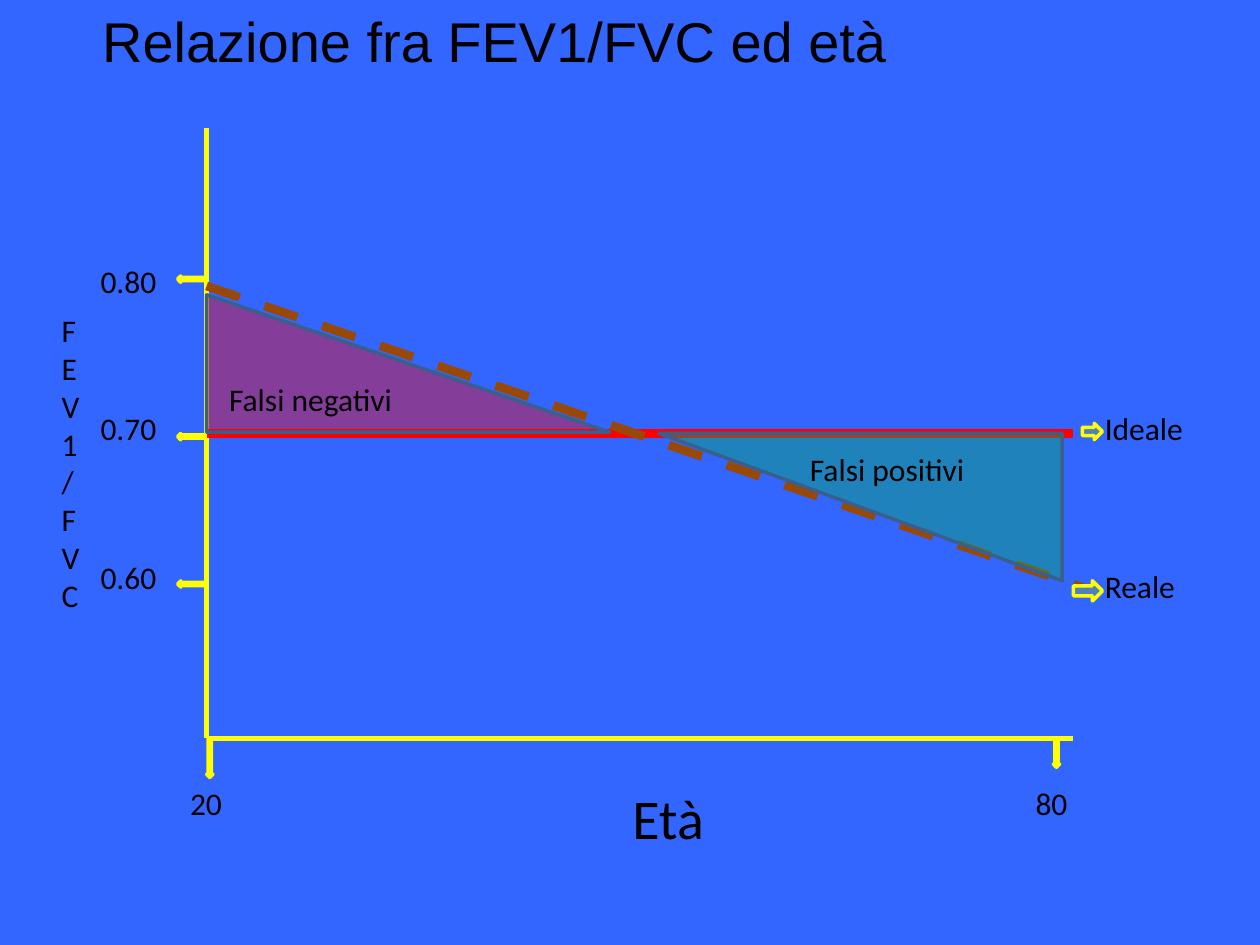
from lxml import etree
from pptx import Presentation
from pptx.dml.color import RGBColor
from pptx.enum.dml import MSO_LINE
from pptx.enum.shapes import MSO_CONNECTOR, MSO_SHAPE
from pptx.enum.text import MSO_ANCHOR, PP_ALIGN
from pptx.oxml.ns import qn
from pptx.util import Inches, Pt

STRAIGHT = MSO_CONNECTOR.STRAIGHT
DASH = MSO_LINE.DASH
LEFT, RIGHT = MSO_SHAPE.LEFT_ARROW, MSO_SHAPE.RIGHT_ARROW
DOWN, WEDGE = MSO_SHAPE.DOWN_ARROW, MSO_SHAPE.RIGHT_TRIANGLE
TOP, START = MSO_ANCHOR.TOP, PP_ALIGN.LEFT

COLORS = {
    "back": "3366FF", "text": "000000", "axis": "FFFF00", "mark": "4F81BD",
    "ideal": "FF0000", "real": "984807", "edge": "3A5F8C", "pos": "00B050",
}


def color(name):
    """Return the named colour."""
    return RGBColor.from_string(COLORS[name])


def write(shape, text, size=18, font="Calibri", inset=0.1):
    """Put formatted text in a shape."""
    frame = shape.text_frame
    frame.word_wrap = True
    frame.vertical_anchor = TOP
    frame.margin_left = Inches(inset)
    para = frame.paragraphs[0]
    para.alignment = START
    run = para.add_run()
    run.text = text
    run.font.size, run.font.name = Pt(size), font
    run.font.color.rgb = color("text")


class Chart:
    """Holds the slide and draws its elements in one style."""

    def __init__(self, deck):
        """Add a title-only slide with a plain background."""
        self.slide = deck.slides.add_slide(deck.slide_layouts[5])
        self.shapes = self.slide.shapes
        fill = self.slide.background.fill
        fill.solid()
        fill.fore_color.rgb = color("back")

    def title(self, text, x, y, w, h):
        """Place and fill the title."""
        box = self.shapes.title
        box.left, box.top = Inches(x), Inches(y)
        box.width, box.height = Inches(w), Inches(h)
        write(box, text, size=32, font="Arial", inset=0.22)

    def label(self, text, x, y, w, h=0.4, **style):
        """Add a text box."""
        box = self.shapes.add_textbox(Inches(x), Inches(y), Inches(w), Inches(h))
        write(box, text, **style)

    def line(self, x1, y1, x2, y2, tint="axis", width=3, dash=None):
        """Add a straight line."""
        line = self.shapes.add_connector(
            STRAIGHT, Inches(x1), Inches(y1), Inches(x2), Inches(y2))
        line.line.color.rgb = color(tint)
        line.line.width = Pt(width)
        if dash:
            line.line.dash_style = dash
        etree.SubElement(line._element.spPr, qn("a:effectLst"))

    def shape(self, kind, x, y, w, h, fill="mark", edge="axis", alpha=None, turn=0):
        """Add a filled preset shape, see-through if alpha is given."""
        form = self.shapes.add_shape(kind, Inches(x), Inches(y), Inches(w), Inches(h))
        form.shadow.inherit = False
        form.rotation = turn
        form.fill.solid()
        form.fill.fore_color.rgb = color(fill)
        form.line.color.rgb = color(edge)
        form.line.width = Pt(2)
        if alpha:
            tint = form._element.spPr.find(qn("a:solidFill"))[0]
            etree.SubElement(tint, qn("a:alpha"), val=str(alpha * 1000))


def build():
    """Draw the slide and save it."""
    deck = Presentation()
    deck.slide_width, deck.slide_height = Inches(10), Inches(7.5)
    chart = Chart(deck)
    x0, x1, base, mid = 1.64, 8.52, 5.86, 3.44

    chart.title("Relazione fra FEV1/FVC ed età", 0.59, 0, 8.98, 0.64)
    chart.line(x0, 1.02, x0, base)
    chart.line(x0, base, x1, base)
    chart.label("FEV1/FVC", 0.39, 2.42, 0.39, 2.52)
    chart.label("Età", 4.92, 6.17, 2.5, 0.64, size=32)

    for text, y, top in (("0.80", 2.19, 2.03), ("0.70", mid, 3.2), ("0.60", 4.61, 4.38)):
        chart.shape(LEFT, x0 - 0.23, y, 0.23, 0.05)
        chart.label(text, 0.7, top, 0.76)
    for text, x, tall, fill, left in (
            ("20", x0, 0.31, "mark", 1.41), ("80", 8.36, 0.23, "axis", 8.12)):
        chart.shape(DOWN, x, base, 0.05, tall, fill=fill)
        chart.label(text, left, 6.17, 0.62)

    chart.line(x0, mid, x1, mid, tint="ideal", width=5)
    chart.line(x0, 2.27, 8.67, 4.69, tint="real", width=5, dash=DASH)
    chart.shape(WEDGE, x0, 2.34, 3.2, 1.09, fill="ideal", edge="edge", alpha=40)
    chart.shape(WEDGE, 5.23, mid, 3.2, 1.17, fill="pos", edge="edge", alpha=39, turn=180)
    chart.label("Falsi negativi", 1.72, 2.97, 1.64)
    chart.label("Falsi positivi", 6.33, 3.52, 1.64)

    chart.shape(RIGHT, 8.59, 3.36, 0.16, 0.13)
    chart.label("Ideale", 8.67, 3.2, 1.02)
    chart.shape(RIGHT, x1, 4.61, 0.23, 0.16)
    chart.label("Reale", 8.67, 4.45, 0.94)
    deck.save("out.pptx")


build()
